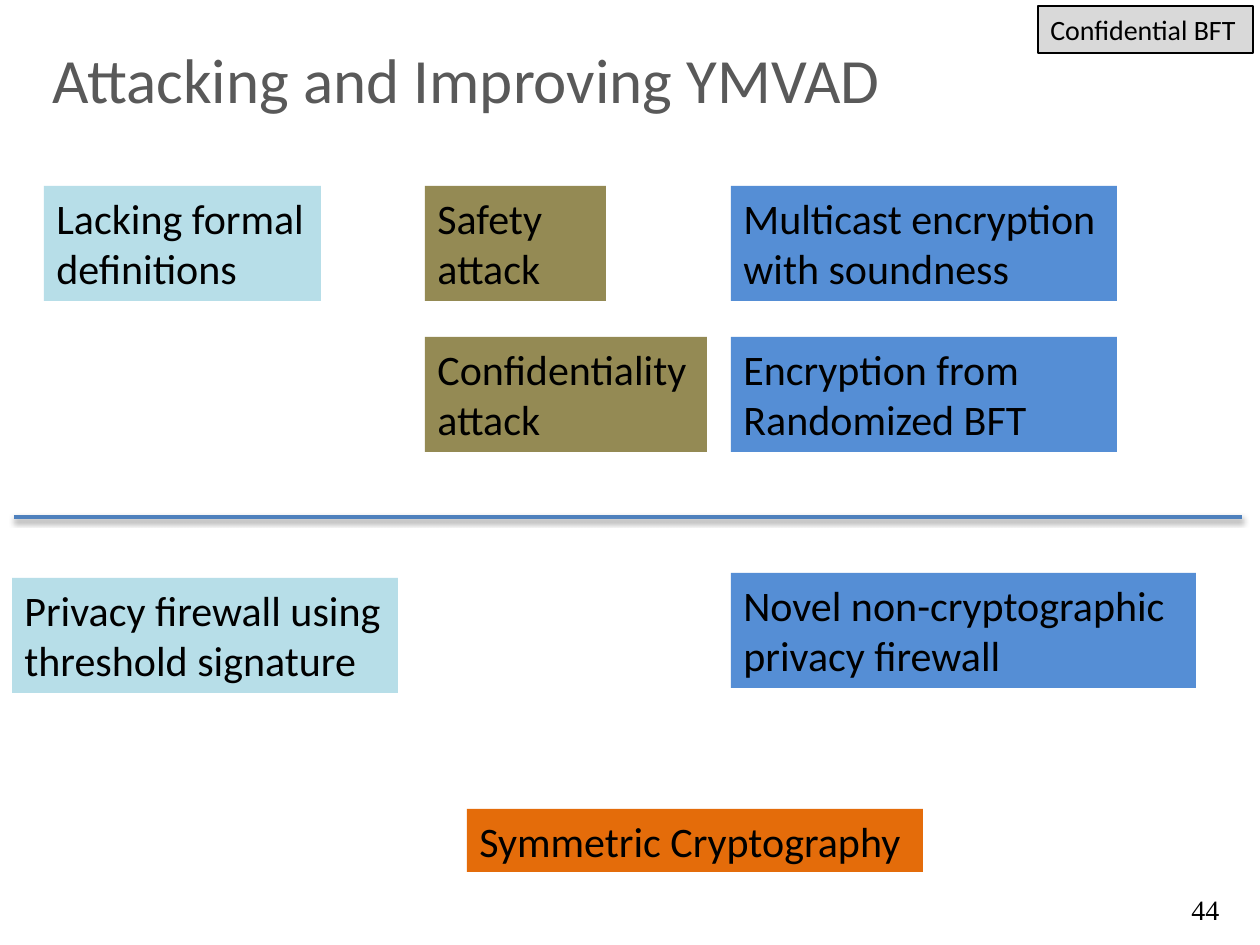
from dataclasses import dataclass

from lxml import etree
from pptx import Presentation, util as u
from pptx.dml.color import RGBColor
from pptx.enum import shapes, text
from pptx.oxml import parse_xml
from pptx.oxml.ns import nsdecls, qn

PX = u.Inches(1) / 126


@dataclass(frozen=True)
class Theme:
    """Colours, fonts and type sizes of the slide."""
    font: str = "Calibri"
    number_font: str = "Times New Roman"
    title: str = "595959"
    ink: str = "000000"
    tag: str = "D9D9D9"
    prior: str = "B7DEE8"
    attack: str = "948A54"
    ours: str = "558ED5"
    crypto: str = "E46C0A"
    rule: str = "4F81BD"
    title_size: int = 36
    box_size: int = 24
    small_size: int = 16


T = Theme()


def px(*lengths):
    """Turn pixel lengths into EMU."""
    return [u.Emu(round(n * PX)) for n in lengths]


def write(tf, lines, size, color=T.ink, font=T.font):
    """Fill a text frame with one left-aligned paragraph per line."""
    tf.word_wrap = True
    tf.vertical_anchor = text.MSO_ANCHOR.TOP
    for i, line in enumerate(lines):
        p = tf.add_paragraph() if i else tf.paragraphs[0]
        p.alignment = text.PP_ALIGN.LEFT
        r = p.add_run()
        r.text = line
        r.font.size = u.Pt(size)
        r.font.name = font
        r.font.color.rgb = RGBColor.from_string(color)


def add_title(s, at, line):
    """Place and format the title placeholder."""
    sp = s.shapes.title
    sp.left, sp.top, sp.width, sp.height = px(*at)
    write(sp.text_frame, [line], T.title_size, T.title)
    sp.text_frame.auto_size = text.MSO_AUTO_SIZE.NONE


def add_box(s, at, fill, *lines, size=T.box_size, border=None):
    """Add a filled rectangle with text and an optional border."""
    sp = s.shapes.add_shape(shapes.MSO_SHAPE.RECTANGLE, *px(*at))
    sp.shadow.inherit = False
    sp.fill.solid()
    sp.fill.fore_color.rgb = RGBColor.from_string(fill)
    if border:
        sp.line.color.rgb = RGBColor.from_string(border)
        sp.line.width = u.Pt(0.75)
    else:
        sp.line.fill.background()
    write(sp.text_frame, lines, size)


def add_divider(s, x1, x2, y):
    """Add a horizontal rule with a soft shadow below it."""
    sp = s.shapes.add_connector(shapes.MSO_CONNECTOR.STRAIGHT, *px(x1, y, x2, y))
    sp.line.color.rgb = RGBColor.from_string(T.rule)
    sp.line.width = u.Pt(2)
    effects = parse_xml(f"<a:effectLst {nsdecls('a')}/>")
    shadow = etree.SubElement(effects, qn("a:outerShdw"), blurRad="40000",
                              dist="20000", dir="5400000", rotWithShape="0")
    color = etree.SubElement(shadow, qn("a:srgbClr"), val=T.ink)
    etree.SubElement(color, qn("a:alpha"), val="38000")
    sp._element.spPr.append(effects)


def add_number(s, at, number):
    """Add the slide number."""
    sp = s.shapes.add_textbox(*px(*at))
    write(sp.text_frame, [number], T.small_size, font=T.number_font)


def main():
    """Build the slide and save it."""
    prs = Presentation()
    prs.slide_width, prs.slide_height = px(1260, 945)
    s = prs.slides.add_slide(prs.slide_layouts[5])

    row1, row2, tall = 186, 337, 115
    attacks, ours, wide = 425, 731, 386

    add_title(s, (40, 34, 1182, 110), "Attacking and Improving YMVAD")
    add_box(s, (1038, 6, 215, 47), T.tag, "Confidential BFT",
            size=T.small_size, border=T.ink)
    add_box(s, (44, row1, 277, tall), T.prior, "Lacking formal definitions")
    add_box(s, (12, 578, wide, tall), T.prior,
            "Privacy firewall using", "threshold signature")
    add_box(s, (attacks, row1, 181, tall), T.attack, "Safety attack")
    add_box(s, (attacks, row2, 282, tall), T.attack, "Confidentiality attack")
    add_box(s, (ours, row1, wide, tall), T.ours,
            "Multicast encryption with soundness")
    add_box(s, (ours, row2, wide, tall), T.ours,
            "Encryption from Randomized BFT")
    add_box(s, (ours, 573, 465, tall), T.ours,
            "Novel non-cryptographic privacy firewall")
    add_box(s, (467, 809, 456, 63), T.crypto, "Symmetric Cryptography")
    add_divider(s, 14, 1242, 517)
    add_number(s, (1179, 886, 63, 47), "44")

    prs.save("out.pptx")


if __name__ == "__main__":
    main()
